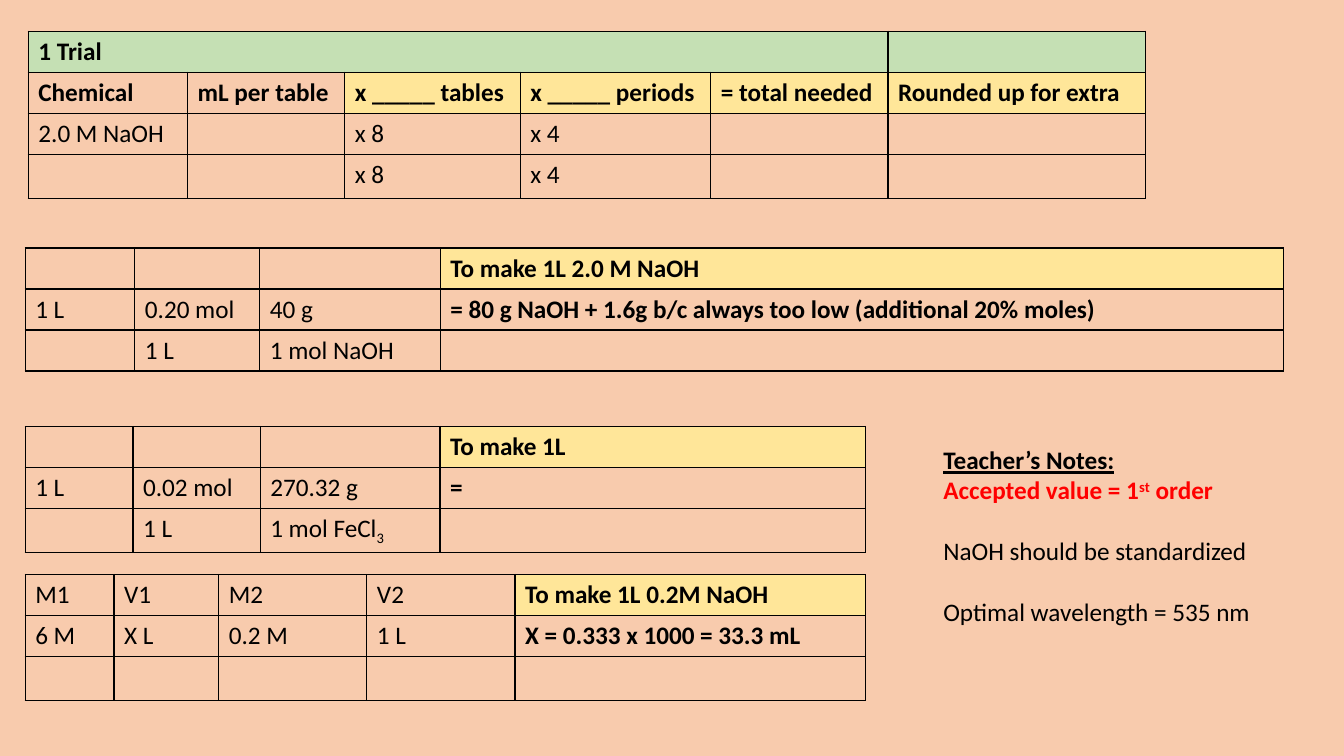
from lxml import etree
from pptx import Presentation
from pptx.dml.color import RGBColor
from pptx.oxml import ns
from pptx.util import Pt

COLORS = {"page": "F8CBAD", "green": "C5E0B4", "yellow": "FFE699",
          "ink": "000000", "red": "FF0000"}
FONT = {"name": "Calibri", "size": Pt(18)}
SUB, SUPER = -25000, 30000
ROW, TALL_ROW = 29.3, 31.4
PAGE = (960, 540)

TABLES = [
    {"at": (20.2, 22.3), "last_row": TALL_ROW,
     "cols": [113.8, 112.3, 125.3, 136.1, 126.7, 183.6],
     "merge": ((0, 0), (0, 4)),
     "fills": {(0, 0): "green", (0, 5): "green", (1, 2): "yellow",
               (1, 3): "yellow", (1, 4): "yellow", (1, 5): "yellow"},
     "bold": [(0, 0)] + [(1, col) for col in range(6)],
     "rows": [
         ["1 Trial", "", "", "", "", ""],
         ["Chemical", "mL per table", "x _____ tables", "x _____ periods",
          "= total needed", "Rounded up for extra"],
         ["2.0 M NaOH", "", "x 8", "x 4", "", ""],
         ["", "", "x 8", "x 4", "", ""]]},
    {"at": (18, 177.2), "last_row": ROW,
     "cols": [78.3, 89.3, 128.9, 602.6],
     "fills": {(0, 3): "yellow"},
     "bold": [(0, 3), (1, 3)],
     "rows": [
         ["", "", "", "To make 1L 2.0 M NaOH"],
         ["1 L", "0.20 mol", "40 g",
          "= 80 g NaOH + 1.6g b/c always too low (additional 20% moles)"],
         ["", "1 L", "1 mol NaOH", ""]]},
    {"at": (18, 304.7), "last_row": TALL_ROW,
     "cols": [77, 90.9, 128.4, 304],
     "fills": {(0, 3): "yellow"},
     "bold": [(0, 3), (1, 3)],
     "rows": [
         ["", "", "", "To make 1L"],
         ["1 L", "0.02 mol", "270.32 g", "="],
         ["", "1 L", [("1 mol FeCl", 0), ("3", SUB)], ""]]},
    {"at": (18, 410.3), "last_row": TALL_ROW,
     "cols": [63.4, 74.9, 105.8, 105.8, 250.4],
     "fills": {(0, 4): "yellow"},
     "bold": [(0, 4), (1, 4)],
     "rows": [
         ["M1", "V1", "M2", "V2", "To make 1L 0.2M NaOH"],
         ["6 M", "X L", "0.2 M", "1 L", "X = 0.333 x 1000 = 33.3 mL"],
         ["", "", "", "", ""]]},
]

NOTES_BOX = (666.7, 313.9, 275, 159.8)
NOTES = [
    ("Teacher’s Notes:", "ink", {"bold": True, "underline": True}, 0),
    ([("Accepted value = 1", 0), ("st", SUPER), (" order", 0)],
     "red", {"bold": True}, 0),
    ("NaOH should be standardized", "ink", {}, 21.8),
    ("Optimal wavelength = 535 nm", "ink", {}, 21.8),
]


def rgb(color):
    return RGBColor.from_string(COLORS[color])


def style(font, formats):
    for key, value in {**FONT, **formats}.items():
        setattr(font, key, value)


def write(paragraph, content, color="ink", formats={}):
    style(paragraph.font, formats)
    pieces = [(content, 0)] if isinstance(content, str) else content
    for words, baseline in pieces:
        if not words:
            continue
        run = paragraph.add_run()
        run.text = words
        style(run.font, formats)
        run.font.color.rgb = rgb(color)
        if baseline:
            run._r.get_or_add_rPr().set("baseline", str(baseline))


def outline(cell):
    props = cell._tc.get_or_add_tcPr()
    for index, side in enumerate(("lnL", "lnR", "lnT", "lnB")):
        line = etree.Element(ns.qn("a:" + side), w=str(Pt(1)))
        ink = etree.SubElement(line, ns.qn("a:solidFill"))
        etree.SubElement(ink, ns.qn("a:srgbClr"), val=COLORS["ink"])
        props.insert(index, line)


def draw_table(slide, entry):
    rows, cols = entry["rows"], entry["cols"]
    heights = [ROW] * (len(rows) - 1) + [entry["last_row"]]
    box = (*entry["at"], sum(cols), sum(heights))
    grid = slide.shapes.add_table(len(rows), len(cols), *map(Pt, box)).table
    for flag in ("first_row", "horz_banding"):
        setattr(grid, flag, False)
    for column, width in zip(grid.columns, cols):
        column.width = Pt(width)
    for line, height in zip(grid.rows, heights):
        line.height = Pt(height)
    if "merge" in entry:
        start, end = entry["merge"]
        grid.cell(*start).merge(grid.cell(*end))
    for r, contents in enumerate(rows):
        for c, content in enumerate(contents):
            cell = grid.cell(r, c)
            if (r, c) in entry["fills"]:
                cell.fill.solid()
                cell.fill.fore_color.rgb = rgb(entry["fills"][r, c])
            else:
                cell.fill.background()
            outline(cell)
            write(cell.text_frame.paragraphs[0], content,
                  formats={"bold": (r, c) in entry["bold"]})


def draw_notes(slide):
    frame = slide.shapes.add_textbox(*map(Pt, NOTES_BOX)).text_frame
    frame.word_wrap = True
    for index, (content, color, formats, gap) in enumerate(NOTES):
        paragraph = frame.add_paragraph() if index else frame.paragraphs[0]
        paragraph.space_before = Pt(gap)
        write(paragraph, content, color, formats)


def main():
    deck = Presentation()
    deck.slide_width, deck.slide_height = map(Pt, PAGE)
    slide = deck.slides.add_slide(deck.slide_layouts[6])
    slide.background.fill.solid()
    slide.background.fill.fore_color.rgb = rgb("page")
    for entry in TABLES:
        draw_table(slide, entry)
    draw_notes(slide)
    deck.save("out.pptx")


if __name__ == "__main__":
    main()
